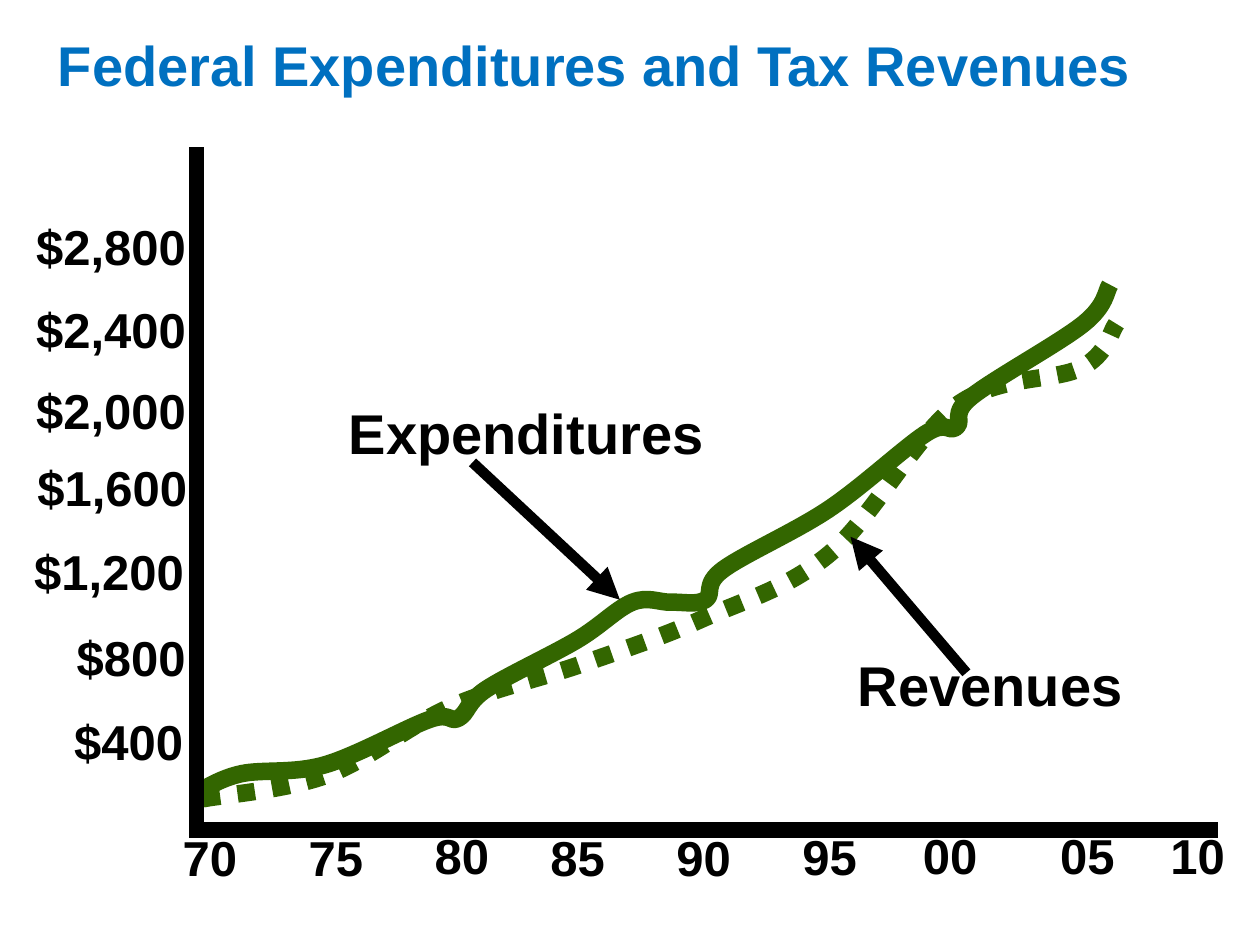
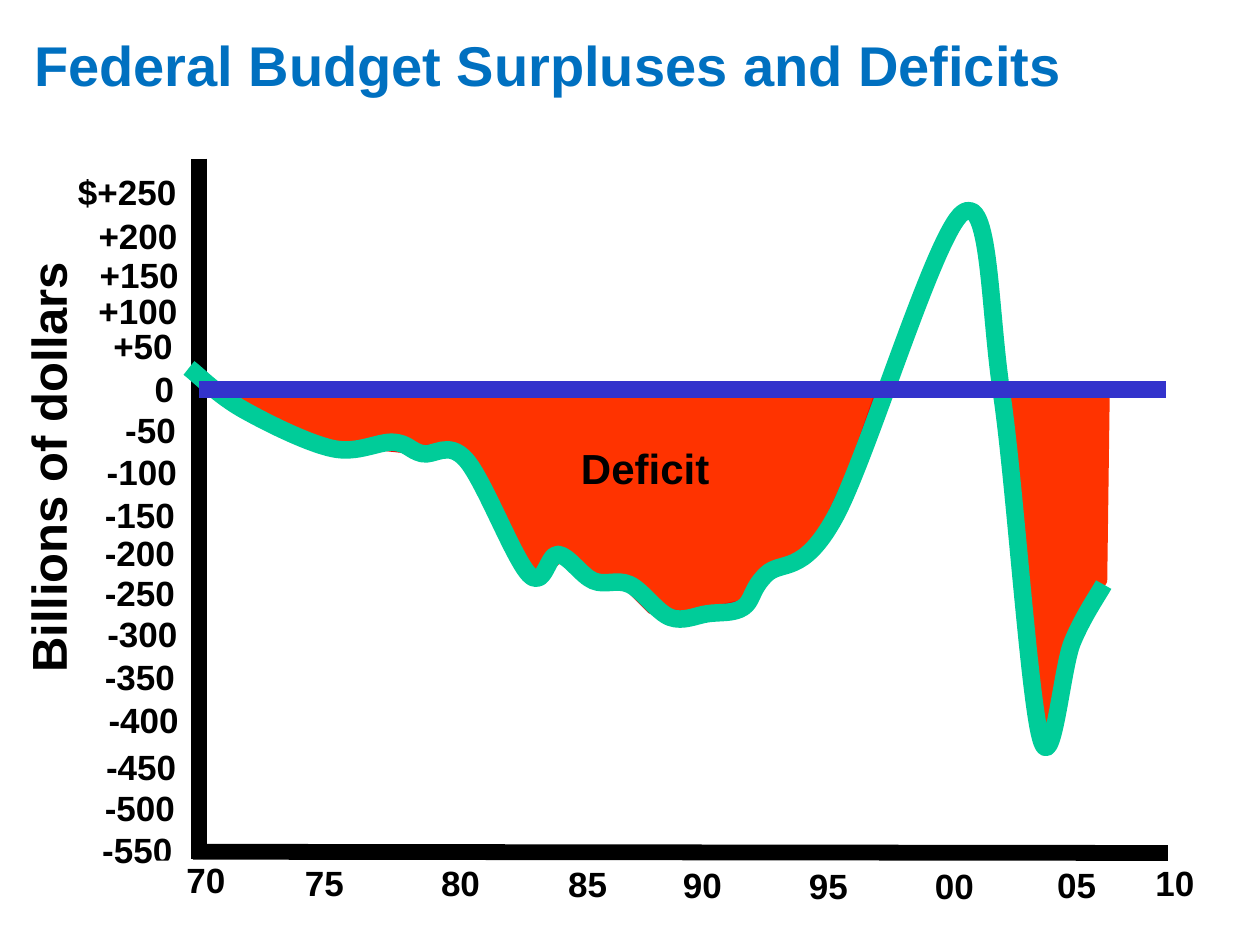
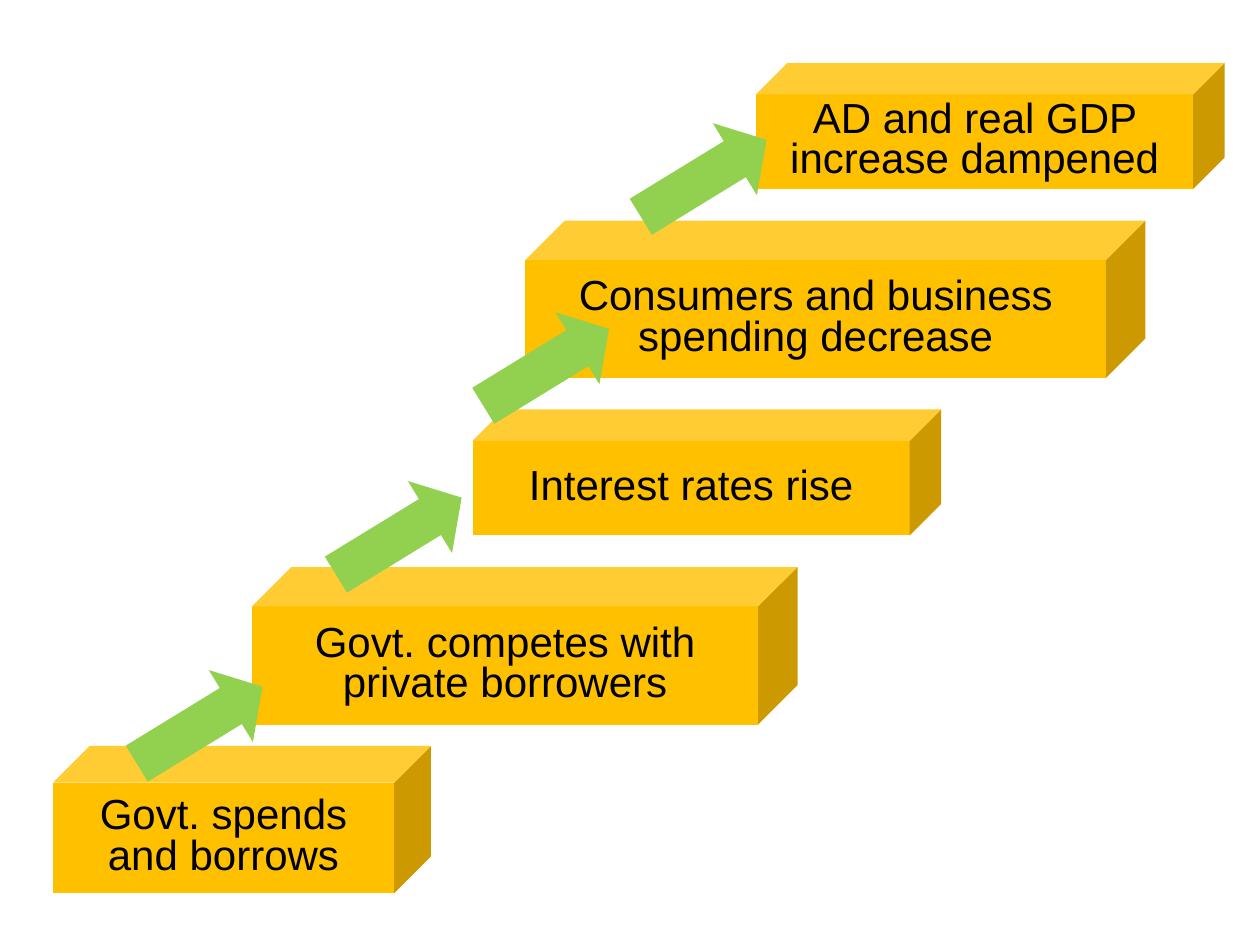
from pptx import Presentation
from pptx.dml.color import RGBColor
from pptx.enum.dml import MSO_LINE as Dash
from pptx.enum.shapes import MSO_CONNECTOR as Link, MSO_SHAPE as Kind
from pptx.enum.text import MSO_ANCHOR as Anchor, MSO_AUTO_SIZE as Fit, PP_ALIGN as Align
from pptx.oxml.ns import qn
from pptx.oxml.xmlchemy import OxmlElement as Node
from pptx.util import Pt

PX = 9144  # 100 px to the inch
FONT = "Arial"
BLACK, WHITE, BLUE, GREEN = "000000", "FFFFFF", "0070C0", "336600"
RED, TEAL, NAVY, GOLD, LIME = "FF3300", "00CC99", "3333CC", "FFC000", "92D050"
rgb = RGBColor.from_string


def write(shape, text, size, gap=0.8, hue=BLACK, bold=True, align=Align.CENTER,
          anchor=Anchor.TOP, fill=None):
    frame = shape.text_frame
    frame.text = text
    frame.word_wrap = True
    frame.auto_size = Fit.NONE
    frame.vertical_anchor = anchor
    para = frame.paragraphs[0]
    para.alignment = align
    para.line_spacing = gap
    para.space_before = Pt(size * 0.1)
    font = para.runs[0].font
    font.name, font.size, font.bold = FONT, Pt(size), bold
    font.color.rgb = rgb(hue)
    if fill:
        shape.fill.solid()
        shape.fill.fore_color.rgb = rgb(fill)


def trace(slide, dots, hue, wide, fill=None):
    """Two dots give a straight line, a fill a polygon, the rest a smooth curve."""
    if len(dots) == 2:
        (x1, y1), (x2, y2) = dots
        shape = slide.shapes.add_connector(Link.STRAIGHT, x1 * PX, y1 * PX, x2 * PX, y2 * PX)
    else:
        route = dots[1:]
        if not fill:
            route = []
            ends = [dots[0], *dots, dots[-1]]
            for a, b, c, d in zip(ends, ends[1:], ends[2:], ends[3:]):
                route.append([q + (r - p) / 6 for p, q, r in zip(a, b, c)])
                route.append([r - (s - q) / 6 for q, r, s in zip(b, c, d)])
                route.append(c)
        form = slide.shapes.build_freeform(dots[0][0] * PX, dots[0][1] * PX)
        form.add_line_segments([(x * PX, y * PX) for x, y in route], close=bool(fill))
        shape = form.convert_to_shape()
        shape.shadow.inherit = False
        if fill:
            shape.fill.solid()
            shape.fill.fore_color.rgb = rgb(fill)
        else:
            shape.fill.background()
            # Every three segments become one Bezier curve
            legs = list(shape._element.spPr.iter(qn("a:lnTo")))
            for i in range(0, len(legs), 3):
                bend = Node("a:cubicBezTo")
                legs[i].addprevious(bend)
                for leg in legs[i:i + 3]:
                    bend.append(leg[0])
                    leg.getparent().remove(leg)
    shape.line.color.rgb = rgb(hue)
    shape.line.width = Pt(wide)
    if len(dots) == 2:
        shape._element.spPr.append(Node("a:effectLst"))
    return shape


deck = Presentation()
deck.slide_width, deck.slide_height = 1000 * PX, 750 * PX

# Titled slides
heads = [("Federal Expenditures and Tax Revenues", 36, 914),
         ("Federal Budget Surpluses and Deficits", 17, 839)]
pages = []
for text, left, wide in heads:
    page = deck.slides.add_slide(deck.slide_layouts[5])
    title = page.shapes.title
    title.left, title.top, title.width, title.height = left * PX, 25 * PX, wide * PX, 59 * PX
    write(title, text, 32, 0.9, BLUE, align=Align.LEFT, fill=WHITE)
    pages.append(page)
flows, gaps = pages
years = ["70", "75", "80", "85", "90", "95", "00", "05", "10"]

# Slide 1: spending and revenue curves
trace(flows, [(150, 659), (967, 659)], BLACK, 9)
spent = [(158, 628), (192, 614), (258, 607), (341, 571), (364, 570), (386, 547), (458, 508),
         (502, 478), (533, 478), (560, 476), (574, 452), (658, 404), (735, 344), (759, 339),
         (771, 315), (860, 257), (881, 226)]
earned = [(161, 634), (260, 615), (358, 561), (462, 527), (558, 491), (659, 439), (759, 322),
          (858, 292), (886, 257)]
trace(flows, spent, GREEN, 10)
trace(flows, earned, GREEN, 10).line.dash_style = Dash.ROUND_DOT
for dots in [(375, 367), (492, 476)], [(767, 534), (675, 426)]:
    arrow = trace(flows, dots, BLACK, 6)
    tip = Node("a:tailEnd")
    tip.set("type", "triangle")
    arrow._element.spPr.find(qn("a:ln")).append(tip)
trace(flows, [(156, 117), (156, 659)], BLACK, 9)

# Slide 2: deficit areas, balance curve and zero line
trace(gaps, [(158, 126), (158, 682)], BLACK, 9)
trace(gaps, [(153, 676), (927, 677)], BLACK, 9)
long = [(177, 312), (698, 311), (677, 372), (652, 426), (640, 442), (606, 453), (591, 479),
        (545, 489), (517, 484), (497, 464), (473, 463), (447, 440), (433, 453), (417, 457),
        (372, 365), (350, 356), (328, 357), (291, 353), (257, 355), (180, 319)]
late = [(799, 312), (810, 462), (829, 597), (851, 507), (876, 461), (878, 311), (797, 309)]
trace(gaps, long, "FF0000", 5, RED)
trace(gaps, late, RED, 4, RED)
net = [(150, 292), (193, 325), (264, 356), (312, 351), (335, 360), (370, 365), (420, 456),
       (443, 440), (471, 461), (500, 464), (532, 490), (562, 487), (590, 482), (608, 456),
       (663, 410), (764, 169), (795, 312), (826, 586), (851, 510), (876, 464)]
trace(gaps, net, TEAL, 10)
trace(gaps, [(158, 309), (925, 309)], NAVY, 10)

# Labels of both charts: slide, size, gap, height, fill, align, texts, (left, top, width) of each
sums = ["$2,800", "$2,400", "$2,000", "$1,600", "$1,200", "$800", "$400"]
sides = ["$+250", "+200", "+150", "+100", "+50", "0"] + [f"-{n}" for n in range(50, 551, 50)]
mid = Align.CENTER
sets = [
    (flows, 28, 0.8, 47, None, mid, sums,
     [(17, 176, 142), (17, 242, 142), (17, 306, 142), (17, 367, 144), (17, 434, 139),
      (50, 502, 108), (31, 569, 142)]),
    (flows, 28, 0.8, 47, None, mid, years,
     [(125, 661, 83), (225, 661, 83), (325, 659, 83), (417, 661, 83), (517, 661, 83),
      (617, 660, 83), (708, 659, 92), (817, 659, 92), (917, 659, 67)]),
    (flows, 32, 0.9, 58, None, Align.LEFT, ["Expenditures"], [(267, 317, 311)]),
    (flows, 32, 0.9, 58, None, mid, ["Revenues"], [(667, 517, 238)]),
    (gaps, 20, 0.8, 37, None, mid, sides,
     [(51, 137, 100), (67, 172, 85), (67, 203, 87), (61, 231, 97), (72, 259, 83),
      (111, 293, 39), (86, 326, 67), (70, 359, 85), (70, 393, 82), (70, 423, 82),
      (70, 455, 82), (72, 488, 82), (70, 522, 82), (73, 556, 82), (71, 593, 82),
      (70, 626, 82), (68, 659, 82)]),
    (gaps, 20, 0.8, 37, WHITE, mid, years,
     [(122, 683, 83), (216, 685, 83), (324, 685, 83), (425, 686, 83), (516, 687, 83),
      (616, 688, 83), (716, 688, 83), (813, 687, 83), (899, 685, 67)]),
    (gaps, 24, 0.9, 46, RED, mid, ["Deficit"], [(408, 351, 208)]),
    (gaps, 28, 0.9, 52, WHITE, mid, ["Billions of dollars"], [(-138, 345, 357)]),
]
for page, size, gap, high, fill, align, texts, spots in sets:
    for text, (left, top, wide) in zip(texts, spots):
        place = left * PX, top * PX, wide * PX, high * PX
        if fill:
            box = page.shapes.add_shape(Kind.RECTANGLE, *place)
            box.shadow.inherit = False
            box.line.fill.background()
        else:
            box = page.shapes.add_textbox(*place)
        write(box, text, size, gap, align=align, fill=fill)
box.rotation = 270  # the axis name, written last

# Slide 3: steps of crowding out
steps = deck.slides.add_slide(deck.slide_layouts[6])
parts = [
    (Kind.CUBE, 42, 592, 300, 117, "Govt. spends and borrows"),
    (Kind.CUBE, 200, 450, 433, 125, "Govt. competes with private borrowers"),
    (Kind.CUBE, 375, 325, 372, 100, "Interest rates rise"),
    (Kind.CUBE, 417, 175, 492, 125, "Consumers and business spending decrease"),
    (Kind.CUBE, 600, 50, 372, 100, "AD and real GDP increase dampened"),
]
for left, top in (100, 542), (258, 392), (375, 258), (500, 108):
    parts.append((Kind.RIGHT_ARROW, left, top, 117, 67, ""))
for kind, left, top, wide, high, text in parts:
    shape = steps.shapes.add_shape(kind, left * PX, top * PX, wide * PX, high * PX)
    shape.shadow.inherit = False
    shape.line.fill.background()
    if text:
        write(shape, text, 24, bold=False, anchor=Anchor.MIDDLE, fill=GOLD)
    else:
        shape.fill.solid()
        shape.fill.fore_color.rgb = rgb(LIME)
        shape.rotation = 328.5
        shape.adjustments[1] = 0.44

deck.save("out.pptx")
